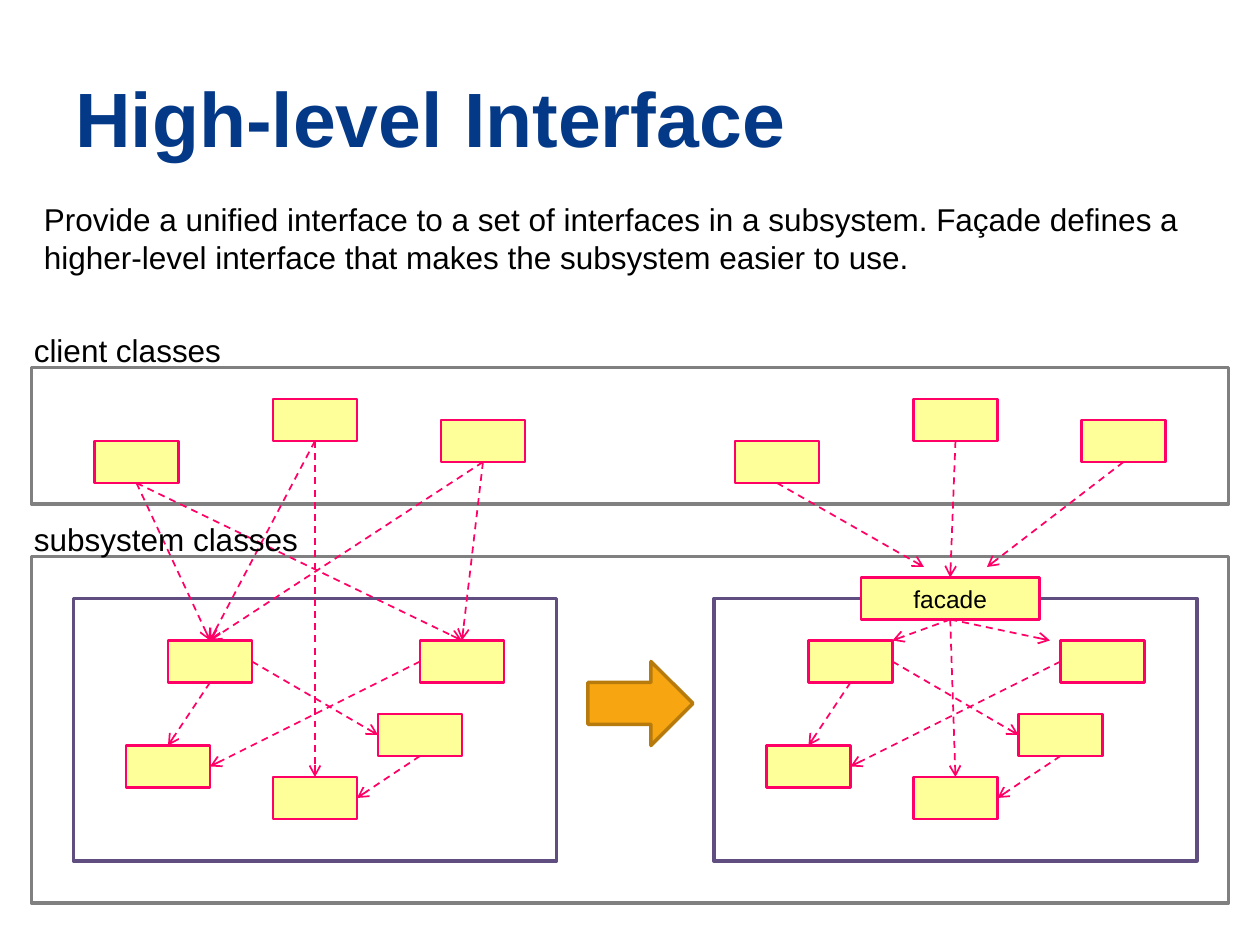
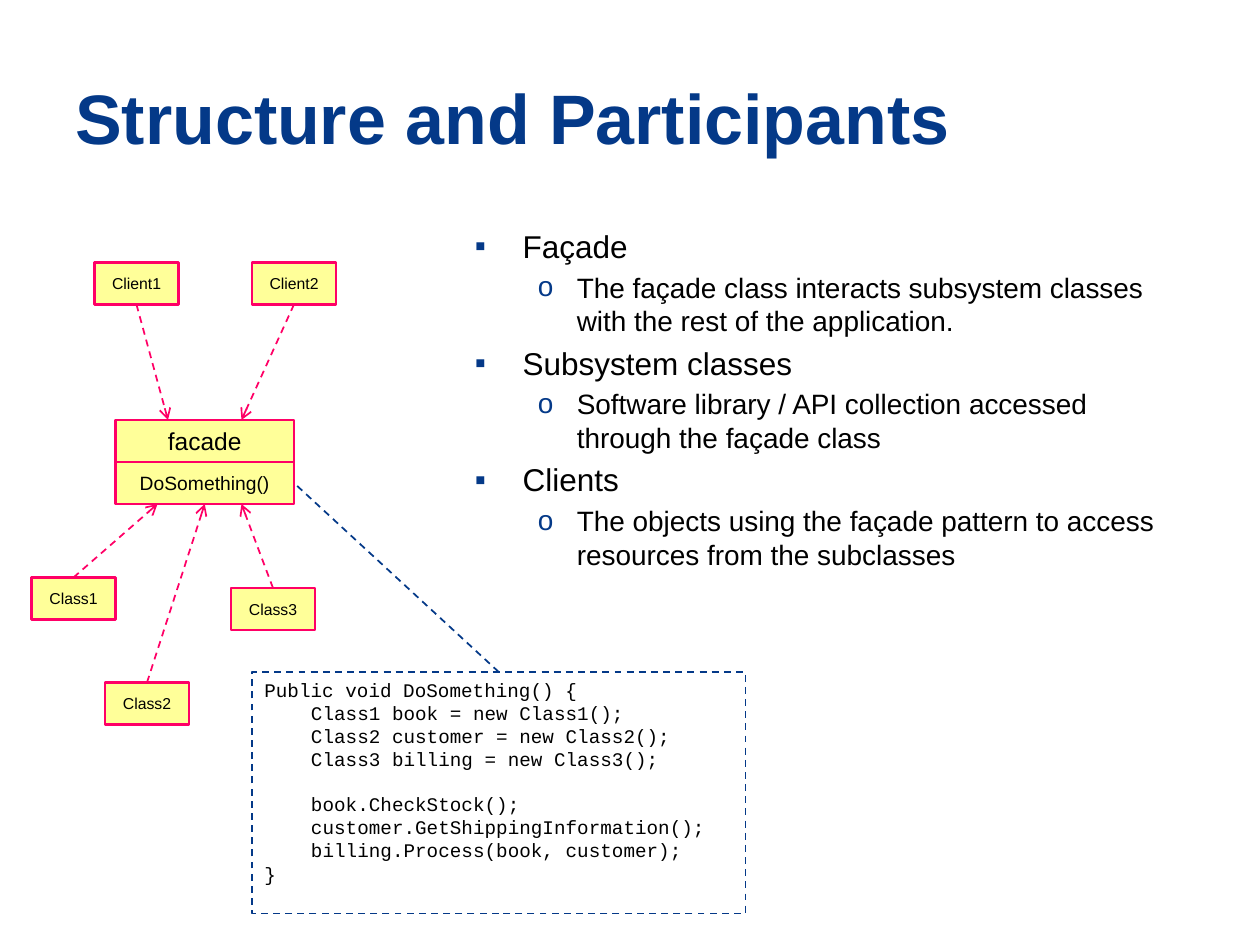
from dataclasses import dataclass
from typing import Optional, Union

from lxml import etree
from pptx import Presentation
from pptx import util as u
from pptx.dml.color import RGBColor
from pptx.enum import dml, shapes, text
from pptx.oxml import ns

COLORS = {
    "navy": "043988", "black": "000000", "white": "FFFFFF", "pink": "FF0066",
    "yellow": "FFFF99", "gray": "808080", "purple": "614E81",
    "orange": "F7A611", "brown": "B77B0D",
}
SANS, MONO = "Arial", "Courier New"
TOP, LEFT, BOTTOM, RIGHT = range(4)


@dataclass(frozen=True)
class Box:
    """A block on a grid of twelve cells to the inch."""
    name: str
    x: float
    y: float
    w: float = 8
    h: float = 4
    label: str = ""
    size: int = 9
    fill: Optional[str] = "yellow"
    line: str = "pink"
    weight: float = 1.5
    kind: shapes.MSO_SHAPE = shapes.MSO_SHAPE.RECTANGLE


# A link ends at the side of a named box or at a free grid point.
End = tuple[Union[str, float], float]


@dataclass(frozen=True)
class Link:
    start: End
    end: End
    color: str = "pink"
    arrow: bool = True


def cells(count: float) -> u.Length:
    return u.Inches(count / 12)


def rgb(name: str) -> RGBColor:
    return RGBColor.from_string(COLORS[name])


def style(paragraph, size: float, color: str = "black", font: str = SANS, bold: bool = False) -> None:
    for run in paragraph.runs:
        run.font.size, run.font.name, run.font.bold = u.Pt(size), font, bold
        run.font.color.rgb = rgb(color)


def add_text(slide, place: tuple, words: str, size: int, wrap: bool = True, **look):
    box = slide.shapes.add_textbox(*map(u.Inches, place))
    frame = box.text_frame
    frame.word_wrap = wrap
    frame.text = words
    style(frame.paragraphs[0], size, **look)
    return frame


def add_title(slide, words: str, size: int) -> None:
    frame = add_text(slide, (0.5, 0.3, 9, 1.25), words, size, color="navy", bold=True)
    frame.vertical_anchor = text.MSO_ANCHOR.MIDDLE


def add_box(slide, box: Box):
    block = slide.shapes.add_shape(box.kind, *map(cells, (box.x, box.y, box.w, box.h)))
    block.shadow.inherit = False
    if box.fill:
        block.fill.solid()
        block.fill.fore_color.rgb = rgb(box.fill)
    else:
        block.fill.background()
    block.line.color.rgb = rgb(box.line)
    block.line.width = u.Pt(box.weight)
    if box.label:
        frame = block.text_frame
        frame.text = box.label
        frame.vertical_anchor = text.MSO_ANCHOR.MIDDLE
        frame.paragraphs[0].alignment = text.PP_ALIGN.CENTER
        style(frame.paragraphs[0], box.size)
    return block


def add_link(slide, link: Link, blocks: dict) -> None:
    points = [(0, 0) if isinstance(end[0], str) else tuple(map(cells, end))
              for end in (link.start, link.end)]
    wire = slide.shapes.add_connector(shapes.MSO_CONNECTOR.STRAIGHT, *points[0], *points[1])
    for end, join in ((link.start, wire.begin_connect), (link.end, wire.end_connect)):
        if isinstance(end[0], str):
            join(blocks[end[0]], end[1])
    wire.line.color.rgb = rgb(link.color)
    wire.line.width = u.Pt(1)
    wire.line.dash_style = dml.MSO_LINE.DASH
    if link.arrow:
        etree.SubElement(wire.line._get_or_add_ln(), ns.qn("a:tailEnd"), type="arrow")
    etree.SubElement(wire._element.spPr, ns.qn("a:effectLst"))


def add_diagram(slide, boxes: list[Box], links: list[Link]) -> dict:
    blocks = {box.name: add_box(slide, box) for box in boxes}
    for link in links:
        add_link(slide, link, blocks)
    return blocks


def add_bullet(paragraph, mark: str, margin: float, hang: float) -> None:
    props = paragraph._p.get_or_add_pPr()
    props.set("marL", str(u.Inches(margin)))
    props.set("indent", str(-u.Inches(hang)))
    spacing = etree.SubElement(props, ns.qn("a:spcBef"))
    etree.SubElement(spacing, ns.qn("a:spcPct"), val="20000")
    color = etree.SubElement(props, ns.qn("a:buClr"))
    etree.SubElement(color, ns.qn("a:srgbClr"), val=COLORS["navy"])
    etree.SubElement(props, ns.qn("a:buFont"), typeface=SANS)
    etree.SubElement(props, ns.qn("a:buChar"), char=mark)


# High-level interface: the same classes without and with a facade
HALF_SHIFT = 61
CLASS_SPOTS = {
    "client1": (9, 42), "client2": (26, 38), "client3": (42, 40),
    "entry": (16, 61), "store": (12, 71), "core": (26, 74),
    "helper": (36, 68), "service": (40, 61),
}
INNER_LINKS = [
    (("entry", RIGHT), ("helper", LEFT)),
    (("entry", BOTTOM), ("store", TOP)),
    (("service", LEFT), ("store", RIGHT)),
    (("helper", BOTTOM), ("core", RIGHT)),
]
DIRECT_LINKS = [
    (("client1", BOTTOM), ("entry", TOP)),
    (("client1", BOTTOM), ("service", TOP)),
    (("client2", BOTTOM), ("entry", TOP)),
    (("client2", BOTTOM), ("core", TOP)),
    (("client3", BOTTOM), ("entry", TOP)),
    (("client3", BOTTOM), ("service", TOP)),
]
FACADE_LINKS = [
    (("client1", BOTTOM), (88, 54)),
    (("client2", BOTTOM), ("facade", TOP)),
    (("client3", BOTTOM), (94, 54)),
    (("facade", BOTTOM), (85, 61)),
    (("facade", BOTTOM), ("core", TOP)),
    (("facade", BOTTOM), (100, 61)),
]


def subsystem(shift: float) -> list[Box]:
    frame = Box("subsystem", 7 + shift, 57, 46, 25, fill=None, line="purple", weight=2)
    return [frame] + [Box(name, x + shift, y) for name, (x, y) in CLASS_SPOTS.items()]


def build_interface(slide) -> None:
    add_title(slide, "High-level Interface", 44)
    add_text(slide, (0.25, 1.54, 9.42, 0.71),
             "Provide a unified interface to a set of interfaces in a subsystem. "
             "Façade defines a higher-level interface that makes the subsystem easier to use.", 18)

    # Client and subsystem layers, with the arrow between the halves
    for layer in (
        Box("clients", 3, 35, 114, 13, fill=None, line="gray", weight=2),
        Box("subsystems", 3, 53, 114, 33, fill=None, line="gray", weight=2),
        Box("change", 56, 63, 10, 8, fill="orange", line="brown", weight=2,
            kind=shapes.MSO_SHAPE.RIGHT_ARROW),
    ):
        add_box(slide, layer)

    # Both halves
    facade = Box("facade", 82, 55, 17, label="facade", size=14)
    for boxes, outer_links in (
        (subsystem(0), DIRECT_LINKS),
        (subsystem(HALF_SHIFT) + [facade], FACADE_LINKS),
    ):
        add_diagram(slide, boxes, [Link(*ends) for ends in outer_links + INNER_LINKS])

    add_text(slide, (0.17, 2.58, 1.76, 0.4), "client classes", 18, wrap=False)
    add_text(slide, (0.17, 4.08, 2.32, 0.4), "subsystem classes", 18, wrap=False)


# Structure and participants: class diagram, roles and sample code
PARTICIPANTS = [
    ("Façade", "The façade class interacts subsystem classes with the rest of the application."),
    ("Subsystem classes", "Software library / API collection accessed through the façade class"),
    ("Clients", "The objects using the façade pattern to access resources from the subclasses"),
]
STRUCTURE_BOXES = [
    Box("client1", 9, 25, label="Client1"),
    Box("client2", 24, 25, label="Client2"),
    Box("class1", 3, 55, label="Class1"),
    Box("class2", 10, 65, label="Class2"),
    Box("class3", 22, 56, label="Class3"),
    Box("facade", 11, 40, 17, label="facade", size=14),
    Box("method", 11, 44, 17, label="DoSomething()", size=11),
    Box("code", 24, 64, 47, 23, fill="white", line="navy", weight=1),
]
STRUCTURE_LINKS = [
    Link(("client1", BOTTOM), (16, 40)),
    Link(("client2", BOTTOM), (23, 40)),
    Link(("class1", TOP), (15, 48)),
    Link(("class2", TOP), ("method", BOTTOM)),
    Link(("class3", TOP), (23, 48)),
    Link(("code", TOP), ("method", RIGHT), "navy", False),
]
CODE_BODY = [
    "Class1 book = new Class1();",
    "Class2 customer = new Class2();",
    "Class3 billing = new Class3();",
    "book.CheckStock();",
    "customer.GetShippingInformation();",
    "billing.Process(book, customer);",
]
CODE_CALLS_START = CODE_BODY[3]


def fill_code(block) -> None:
    block.line.dash_style = dml.MSO_LINE.DASH
    frame = block.text_frame
    frame.vertical_anchor = text.MSO_ANCHOR.TOP
    frame.text = "\n".join(["Public void DoSomething() {", *CODE_BODY, "}"])
    for paragraph in frame.paragraphs:
        paragraph.alignment = text.PP_ALIGN.LEFT
        style(paragraph, 11, font=MONO)
        if paragraph.text in CODE_BODY:
            paragraph._p.get_or_add_pPr().set("marL", str(u.Inches(0.37)))
        if paragraph.text == CODE_CALLS_START:
            paragraph.space_before = u.Pt(12.5)


def build_structure(slide) -> None:
    add_title(slide, "Structure and Participants", 40)

    # Roles
    frame = add_text(slide, (3.67, 1.75, 5.83, 4.95),
                     "\n".join(line for role in PARTICIPANTS for line in role), 18)
    for index, paragraph in enumerate(frame.paragraphs):
        if index % 2:
            paragraph.level = 1
            add_bullet(paragraph, "o", 0.81, 0.31)
            style(paragraph, 16)
        else:
            add_bullet(paragraph, "▪", 0.38, 0.38)
            style(paragraph, 18)

    # Classes and the code note
    blocks = add_diagram(slide, STRUCTURE_BOXES, STRUCTURE_LINKS)
    fill_code(blocks["code"])


def main() -> None:
    deck = Presentation()
    deck.slide_width, deck.slide_height = u.Inches(10), u.Inches(7.5)
    for build in (build_interface, build_structure):
        build(deck.slides.add_slide(deck.slide_layouts[6]))
    deck.save("out.pptx")


if __name__ == "__main__":
    main()
